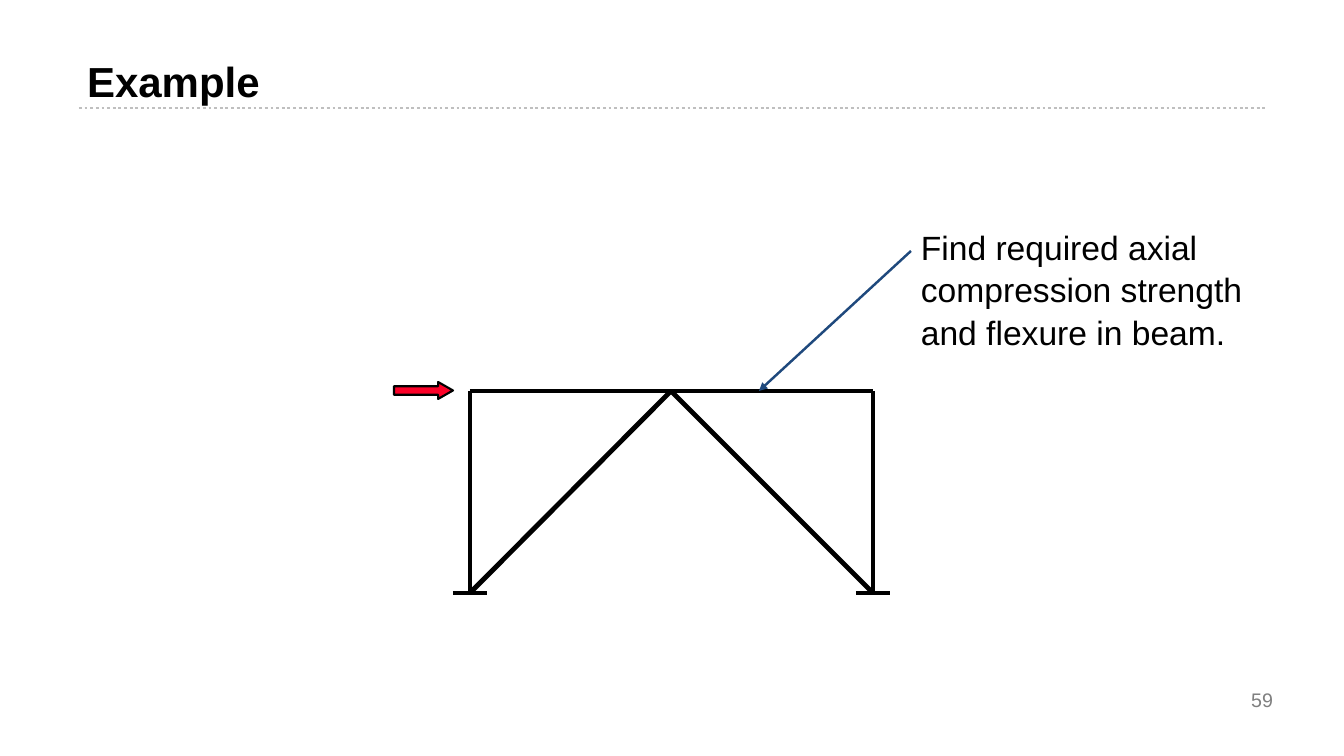
from dataclasses import dataclass

from lxml.etree import SubElement
from pptx import Presentation
from pptx.dml.color import RGBColor
from pptx.enum.dml import MSO_LINE
from pptx.enum.shapes import MSO_CONNECTOR, MSO_SHAPE
from pptx.enum.text import MSO_ANCHOR, PP_ALIGN
from pptx.oxml.ns import qn
from pptx.util import Pt

# Content
TITLE = "Example"
TASK = "Find required axial compression strength and flexure in beam."
PAGE_NUMBER = "59"

# Frame geometry in px
LEFT, MIDDLE, RIGHT = 470, 671, 873
BEAM, BASE = 391, 593
SUPPORT_HALF = 17
COLUMNS = (LEFT, RIGHT)


@dataclass(frozen=True)
class Theme:
    font: str = "Arial"
    ink: str = "000000"
    rule: str = "BFBFBF"
    muted: str = "7F7F7F"
    load: str = "FC0128"
    callout: str = "1F497D"
    title_size: int = 30
    task_size: int = 24
    number_size: int = 14
    member_width: float = 3
    brace_width: float = 3.5


THEME = Theme()


def px(length):
    return round(length * 914400 / 100.8)


def add_line(start, end, color, width):
    line = slide.shapes.add_connector(
        MSO_CONNECTOR.STRAIGHT, *map(px, (*start, *end)))
    line.line.color.rgb = RGBColor.from_string(color)
    line.line.width = Pt(width)
    SubElement(line._element.spPr, qn("a:effectLst"))
    return line


def write(box, text, size, color, anchor, align=PP_ALIGN.LEFT, bold=False):
    frame = box.text_frame
    frame.word_wrap = True
    frame.vertical_anchor = anchor
    frame.text = text
    paragraph = frame.paragraphs[0]
    paragraph.alignment = align
    font = paragraph.runs[0].font
    font.name, font.size, font.bold = THEME.font, Pt(size), bold
    font.color.rgb = RGBColor.from_string(color)
    return paragraph


presentation = Presentation()
presentation.slide_width, presentation.slide_height = px(1344), px(756)
slide = presentation.slides.add_slide(presentation.slide_layouts[5])

# Title, rule and page number
heading = slide.shapes.title
heading.left, heading.top, heading.width, heading.height = map(
    px, (77, 47, 1207, 68))
write(heading, TITLE, THEME.title_size, THEME.ink, MSO_ANCHOR.MIDDLE, bold=True)

title_rule = add_line((79, 108), (1265, 108), THEME.rule, 2)
title_rule.line.dash_style = MSO_LINE.ROUND_DOT

page = slide.shapes.add_textbox(*map(px, (970, 680, 313, 40)))
write(page, PAGE_NUMBER, THEME.number_size, THEME.muted,
      MSO_ANCHOR.MIDDLE, PP_ALIGN.RIGHT)

# Lateral load
load = slide.shapes.add_shape(
    MSO_SHAPE.RIGHT_ARROW, *map(px, (394, 382, 59, 17)))
load.adjustments[0], load.adjustments[1] = 0.5, 0.875
load.shadow.inherit = False
load.fill.solid()
load.fill.fore_color.rgb = RGBColor.from_string(THEME.load)
load.line.color.rgb = RGBColor.from_string(THEME.ink)
load.line.width = Pt(1.5)

# Braced frame: column, half beam, brace and support on each side
for column in COLUMNS:
    foot, joint, apex = (column, BASE), (column, BEAM), (MIDDLE, BEAM)
    add_line(foot, joint, THEME.ink, THEME.member_width)
    add_line(joint, apex, THEME.ink, THEME.member_width)
    add_line(foot, apex, THEME.ink, THEME.brace_width)
    add_line((column - SUPPORT_HALF, BASE), (column + SUPPORT_HALF, BASE),
             THEME.ink, THEME.member_width)

# Task and its pointer to the beam
task = slide.shapes.add_textbox(*map(px, (911, 220, 372, 132)))
task_paragraph = write(task, TASK, THEME.task_size, THEME.ink, MSO_ANCHOR.TOP)
task_paragraph.line_spacing = 1.05

pointer = add_line((911, 251), (759, BEAM), THEME.callout, 1.75)
SubElement(pointer.line._get_or_add_ln(), qn("a:tailEnd"), type="triangle")

presentation.save("out.pptx")
